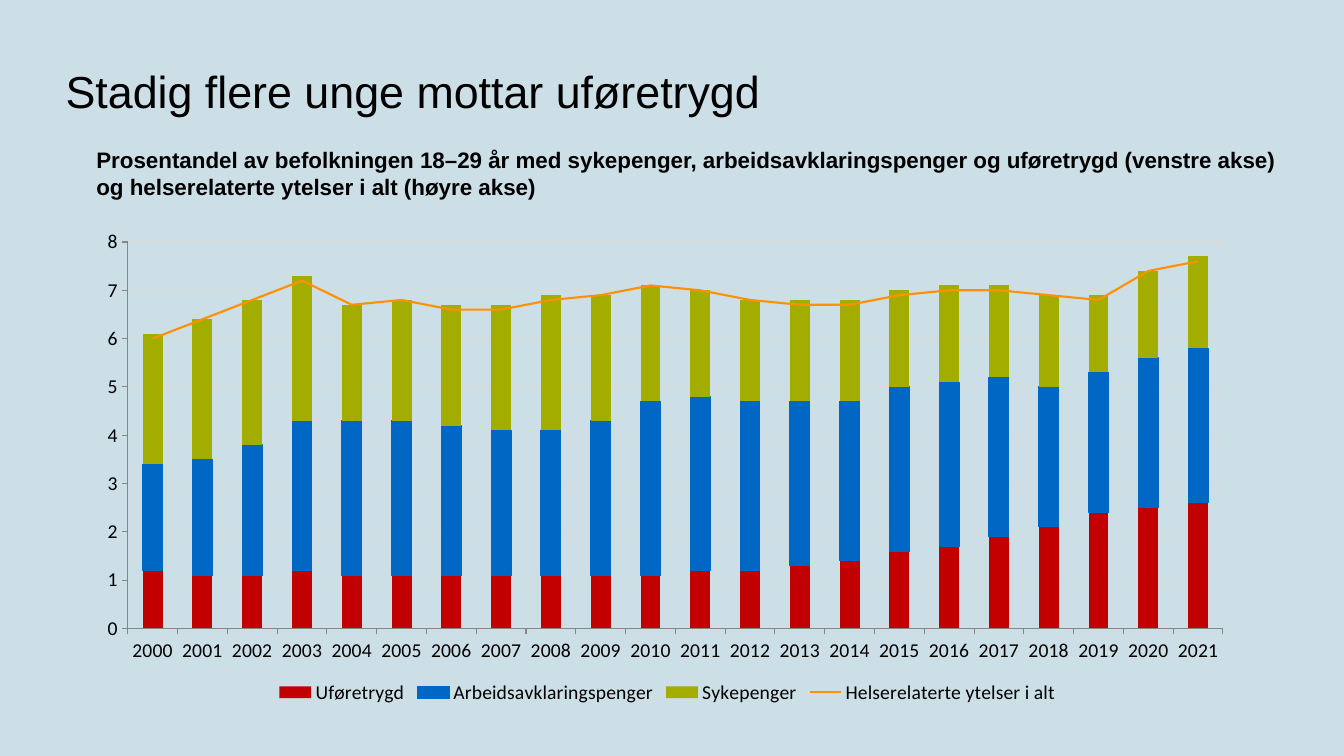
from lxml import etree
from pptx import Presentation
from pptx.chart.data import CategoryChartData
from pptx.dml.color import RGBColor
from pptx.enum.chart import XL_CHART_TYPE, XL_LEGEND_POSITION, XL_MARKER_STYLE, XL_TICK_MARK
from pptx.enum.text import MSO_ANCHOR, PP_ALIGN
from pptx.oxml import parse_xml
from pptx.oxml.ns import nsdecls, qn
from pptx.util import Cm, Pt


def paint(fmt, color):
    fmt.solid()
    fmt.fore_color.rgb = RGBColor.from_string(color)


def style(r, size, color, bold=False):
    r.font.name = "Arial"
    r.font.size = Pt(size)
    r.font.bold = bold
    paint(r.font.fill, color)


prs = Presentation()
prs.slide_width = Cm(33.87)
prs.slide_height = Cm(19.05)
s = prs.slides.add_slide(prs.slide_layouts[5])
paint(s.background.fill, "CCDEE6")

title = s.shapes.title
title.left, title.top, title.width, title.height = Cm(1.4), Cm(0.66), Cm(31.06), Cm(2.44)
tf = title.text_frame
tf.text = "Stadig flere unge mottar uføretrygd"
tf.vertical_anchor = MSO_ANCHOR.BOTTOM
p = tf.paragraphs[0]
p.alignment = PP_ALIGN.LEFT
p.line_spacing = 0.9
style(p.runs[0], 32, "000000")

tf = s.shapes.add_textbox(Cm(2.18), Cm(3.56), Cm(30.86), Cm(1.63)).text_frame
tf.word_wrap = True
tf.text = (
    "Prosentandel av befolkningen 18–29 år med sykepenger, arbeidsavklaringspenger og uføretrygd (venstre akse)\n"
    "og helserelaterte ytelser i alt (høyre akse)"
)
for p in tf.paragraphs:
    style(p.runs[0], 16, "000000", True)

series = [
    ("Uføretrygd", "C30000", [1.2, 1.1, 1.1, 1.2, 1.1, 1.1, 1.1, 1.1, 1.1, 1.1, 1.1,
                              1.2, 1.2, 1.3, 1.4, 1.6, 1.7, 1.9, 2.1, 2.4, 2.5, 2.6]),
    ("Arbeidsavklaringspenger", "0067C5", [2.2, 2.4, 2.7, 3.1, 3.2, 3.2, 3.1, 3, 3, 3.2, 3.6,
                                           3.6, 3.5, 3.4, 3.3, 3.4, 3.4, 3.3, 2.9, 2.9, 3.1, 3.2]),
    ("Sykepenger", "A2AD00", [2.7, 2.9, 3, 3, 2.4, 2.5, 2.5, 2.6, 2.8, 2.6, 2.4,
                              2.2, 2.1, 2.1, 2.1, 2, 2, 1.9, 1.9, 1.6, 1.8, 1.9]),
    ("Helserelaterte ytelser i alt", "FF9100", [6, 6.4, 6.8, 7.2, 6.7, 6.8, 6.6, 6.6, 6.8, 6.9, 7.1,
                                                7, 6.8, 6.7, 6.7, 6.9, 7, 7, 6.9, 6.8, 7.4, 7.6]),
]
data = CategoryChartData()
data.categories = [str(year) for year in range(2000, 2022)]
for name, color, values in series:
    data.add_series(name, values)
chart = s.shapes.add_chart(
    XL_CHART_TYPE.COLUMN_STACKED, Cm(1.4), Cm(5.66), Cm(30.84), Cm(12.19), data
).chart
chart.has_title = False
chart.font.name = "Calibri"
chart.font.size = Pt(14)
paint(chart.font.fill, "000000")
chart.has_legend = True
chart.legend.position = XL_LEGEND_POSITION.BOTTOM
chart.legend.include_in_layout = False

bars = chart.plots[0]
bars.gap_width = 150
bars.overlap = 100
bars.vary_by_categories = False
for ser, (name, color, values) in zip(bars.series, series):
    paint(ser.format.fill, color)
paint(bars.series[1].format.line.fill, "0067C5")
bars.series[1].format.line.width = Pt(0.75)

bar_xml = chart.element.find(".//" + qn("c:barChart"))
total = bar_xml.findall(qn("c:ser"))[3]
for tag in ("c:invertIfNegative", "c:spPr"):
    for el in total.findall(qn(tag)):
        total.remove(el)
line_xml = parse_xml(
    f'<c:lineChart {nsdecls("c")}><c:grouping val="standard"/><c:varyColors val="0"/></c:lineChart>'
)
line_xml.append(total)
etree.SubElement(line_xml, qn("c:marker")).set("val", "1")
for ax in bar_xml.findall(qn("c:axId")):
    etree.SubElement(line_xml, qn("c:axId")).set("val", ax.get("val"))
bar_xml.addnext(line_xml)

line = chart.plots[1].series[0]
line.smooth = False
line.marker.style = XL_MARKER_STYLE.NONE
paint(line.format.line.fill, "FF9100")
line.format.line.width = Pt(1.5)

for axis in (chart.category_axis, chart.value_axis):
    axis.major_tick_mark = XL_TICK_MARK.OUTSIDE
    axis.minor_tick_mark = XL_TICK_MARK.NONE
    paint(axis.format.line.fill, "868686")
    axis.format.line.width = Pt(0.75)
axis = chart.value_axis
axis.minimum_scale, axis.maximum_scale, axis.major_unit = 0, 8, 1
axis.tick_labels.number_format = "0"
axis.tick_labels.number_format_is_linked = False
axis.has_major_gridlines = True
paint(axis.major_gridlines.format.line.fill, "D9D9D9")
axis.major_gridlines.format.line.width = Pt(0.75)

area = chart.element.find(".//" + qn("c:plotArea"))
for el in area.findall(qn("c:layout")):
    area.remove(el)
layout = etree.Element(qn("c:layout"))
manual = etree.SubElement(layout, qn("c:manualLayout"))
for tag, val in (("layoutTarget", "inner"), ("xMode", "edge"), ("yMode", "edge"),
                 ("x", "0.059"), ("y", "0.036"), ("w", "0.895"), ("h", "0.799")):
    etree.SubElement(manual, qn("c:" + tag)).set("val", val)
area.insert(0, layout)

prs.save("out.pptx")
